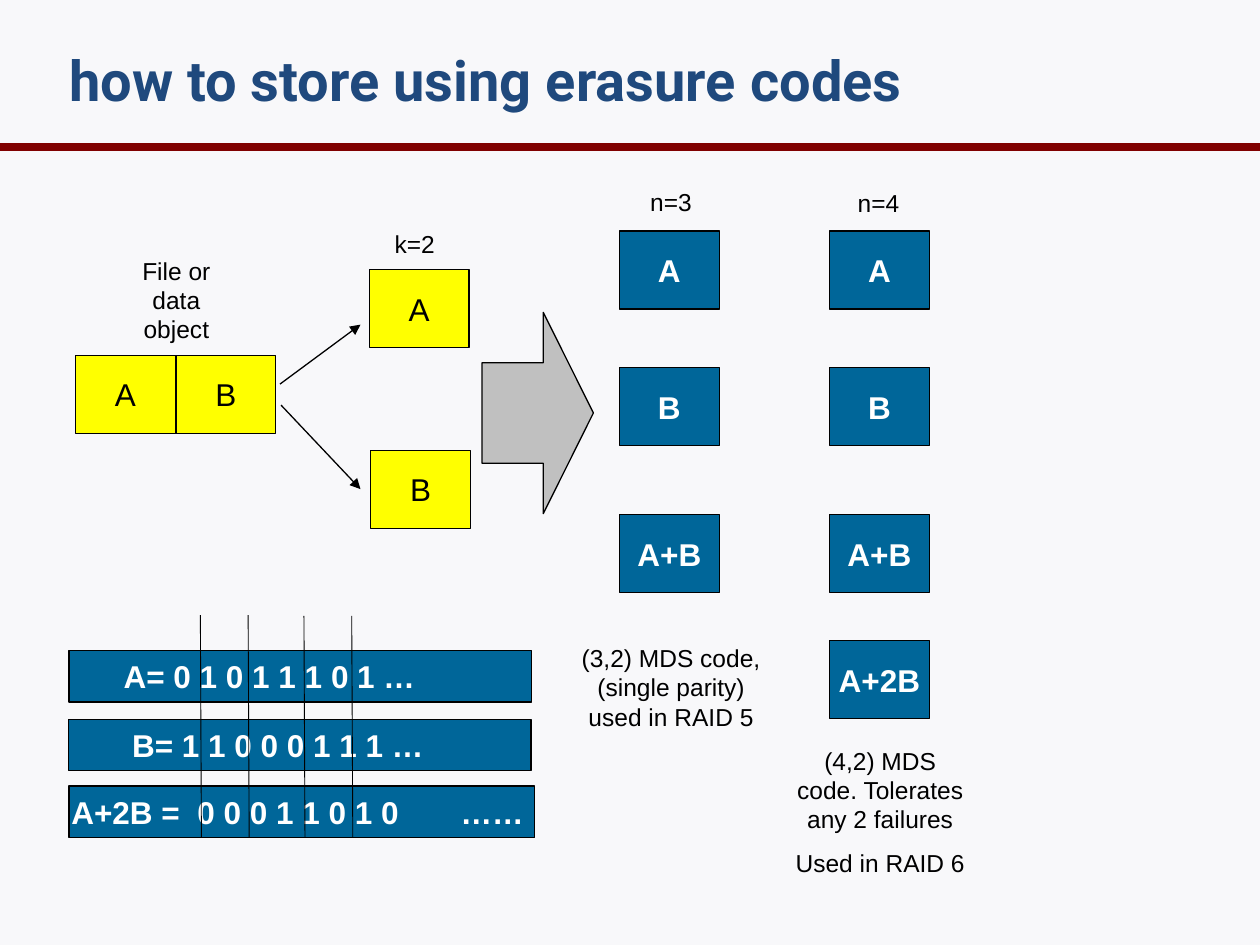
from dataclasses import dataclass

from lxml import etree
from pptx import Presentation
from pptx.dml.color import RGBColor
from pptx.enum import shapes, text
from pptx.oxml import ns
from pptx.util import Pt


@dataclass(frozen=True)
class Theme:
    background: str = "F8F8FA"
    title: str = "1F497D"
    rule: str = "800000"
    data: str = "FFFF00"
    coded: str = "006699"
    arrow: str = "C0C0C0"
    ink: str = "000000"
    light: str = "FFFFFF"
    title_font: str = "Roboto"
    body_font: str = "Arial"
    title_size: float = 32
    block_size: float = 18
    label_size: float = 14


@dataclass(frozen=True)
class Block:
    label: str
    x: float
    y: float
    coded: bool = False


@dataclass(frozen=True)
class BitRow:
    bits: str
    x: float
    y: float
    w: float
    indent: float
    tabs: tuple[float, ...] = ()


@dataclass(frozen=True)
class Label:
    paragraphs: tuple[str, ...]
    x: float
    y: float
    w: float
    h: float


@dataclass(frozen=True)
class Line:
    x1: float
    y1: float
    x2: float
    y2: float
    color: str
    width: float
    arrow: bool = False


THEME = Theme()
BLOCK_W, BLOCK_H = 57, 44.6
ROW_H = 29.5


def rgb(color: str) -> RGBColor:
    return RGBColor.from_string(color)


def style(p, size: float, color: str, bold: bool = False, name: str = THEME.body_font) -> None:
    p.font.size, p.font.bold, p.font.name = Pt(size), bold, name
    p.font.color.rgb = rgb(color)


def add_preset(slide, kind, x: float, y: float, w: float, h: float, fill: str):
    sp = slide.shapes.add_shape(kind, Pt(x), Pt(y), Pt(w), Pt(h))
    sp.shadow.inherit = False
    sp.fill.solid()
    sp.fill.fore_color.rgb = rgb(fill)
    sp.line.color.rgb = rgb(THEME.ink)
    sp.line.width = Pt(0.75)
    return sp


def add_block(slide, b: Block) -> None:
    sp = add_preset(slide, shapes.MSO_SHAPE.RECTANGLE, b.x, b.y, BLOCK_W, BLOCK_H,
                    THEME.coded if b.coded else THEME.data)
    tf = sp.text_frame
    tf.word_wrap = False
    tf.vertical_anchor = text.MSO_ANCHOR.MIDDLE
    p = tf.paragraphs[0]
    p.text, p.alignment = b.label, text.PP_ALIGN.CENTER
    style(p, THEME.block_size, THEME.light if b.coded else THEME.ink, b.coded)


def add_bit_row(slide, row: BitRow) -> None:
    sp = add_preset(slide, shapes.MSO_SHAPE.RECTANGLE, row.x, row.y, row.w, ROW_H, THEME.coded)
    tf = sp.text_frame
    tf.word_wrap = True
    tf.vertical_anchor = text.MSO_ANCHOR.MIDDLE
    tf.margin_left, tf.margin_right = Pt(row.indent), 0
    p = tf.paragraphs[0]
    p.text, p.alignment = row.bits, text.PP_ALIGN.LEFT
    if row.tabs:
        tab_list = etree.SubElement(p._p.get_or_add_pPr(), ns.qn("a:tabLst"))
        for pos in row.tabs:
            etree.SubElement(tab_list, ns.qn("a:tab"), pos=str(Pt(pos)), algn="l")
    style(p, THEME.block_size, THEME.light, True)


def add_label(slide, label: Label) -> None:
    sp = slide.shapes.add_textbox(Pt(label.x), Pt(label.y), Pt(label.w), Pt(label.h))
    tf = sp.text_frame
    tf.word_wrap = True
    for i, words in enumerate(label.paragraphs):
        p = tf.add_paragraph() if i else tf.paragraphs[0]
        p.text, p.alignment = words, text.PP_ALIGN.CENTER
        if i:
            p.space_before = Pt(8)
        style(p, THEME.label_size, THEME.ink)


def add_line(slide, line: Line) -> None:
    cx = slide.shapes.add_connector(shapes.MSO_CONNECTOR.STRAIGHT, Pt(line.x1), Pt(line.y1),
                                    Pt(line.x2), Pt(line.y2))
    cx.line.color.rgb = rgb(line.color)
    cx.line.width = Pt(line.width)
    if line.arrow:
        etree.SubElement(cx.line._get_or_add_ln(), ns.qn("a:tailEnd"), type="triangle")
    etree.SubElement(cx._element.spPr, ns.qn("a:effectLst"))


def add_title(slide, words: str) -> None:
    sp = slide.shapes.add_textbox(Pt(32.4), 0, Pt(669), Pt(90))
    tf = sp.text_frame
    tf.word_wrap = True
    tf.vertical_anchor = text.MSO_ANCHOR.MIDDLE
    p = tf.paragraphs[0]
    p.text = words
    style(p, THEME.title_size, THEME.title, True, THEME.title_font)


def main() -> None:
    prs = Presentation()
    prs.slide_width, prs.slide_height = Pt(720), Pt(540)
    slide = prs.slides.add_slide(prs.slide_layouts[6])
    slide.background.fill.solid()
    slide.background.fill.fore_color.rgb = rgb(THEME.background)

    # Heading and rule
    add_line(slide, Line(0, 84, 720, 84, THEME.rule, 4.5))
    add_title(slide, "how to store using erasure codes")

    # Data object and its two halves
    for b in (Block("A", 43.2, 203), Block("B", 43.2 + BLOCK_W + 0.4, 203),
              Block("A", 211, 154), Block("B", 211.8, 257.3)):
        add_block(slide, b)
    for line in (Line(160, 219.5, 206, 185.5, THEME.ink, 0.75, True),
                 Line(160.6, 231.5, 206, 279.5, THEME.ink, 0.75, True)):
        add_line(slide, line)

    # Encoding arrow
    arrow = add_preset(slide, shapes.MSO_SHAPE.RIGHT_ARROW, 275.5, 178.5, 63.6, 115, THEME.arrow)
    arrow.adjustments[0], arrow.adjustments[1] = 0.5, 0.45

    # Coded columns for n=3 and n=4
    coded_rows = (("A", 132), ("B", 210), ("A+B", 294), ("A+2B", 366))
    for x, n in ((354, 3), (474, 4)):
        for words, y in coded_rows[:n]:
            add_block(slide, Block(words, x, y, True))

    # Labels
    for label in (
        Label(("File or data object",), 60.5, 142.5, 80.6, 58.3),
        Label(("k=2",), 185.5, 127.3, 103, 24.5),
        Label(("n=3",), 332, 103.5, 103, 24.5),
        Label(("n=4",), 450.5, 104, 103, 24.5),
        Label(("(3,2) MDS code, (single parity) used in RAID 5",), 318, 363.7, 131, 58.3),
        Label(("(4,2) MDS code. Tolerates any 2 failures", "Used in RAID 6"),
              447.5, 422.5, 111, 83.5),
    ):
        add_label(slide, label)

    # Bit rows and the guides through them
    for row in (BitRow("A= 0 1 0 1 1 1 0 1 …", 39.4, 371.7, 264.3, 31.3),
                BitRow("B= 1 1 0 0 0 1 1 1 …", 39.2, 411, 264.3, 36.3),
                BitRow("A+2B =\t0 0 0 1 1 0 1 0\t……", 39.4, 449.2, 266.2, 1.4, (72, 222.5))):
        add_bit_row(slide, row)
    for x, y in ((114.5, 351.5), (141.8, 351.5), (173.7, 352), (201, 352)):
        add_line(slide, Line(x, y, x + 0.6, y + 126.7, THEME.ink, 0.5))

    prs.save("out.pptx")


if __name__ == "__main__":
    main()
